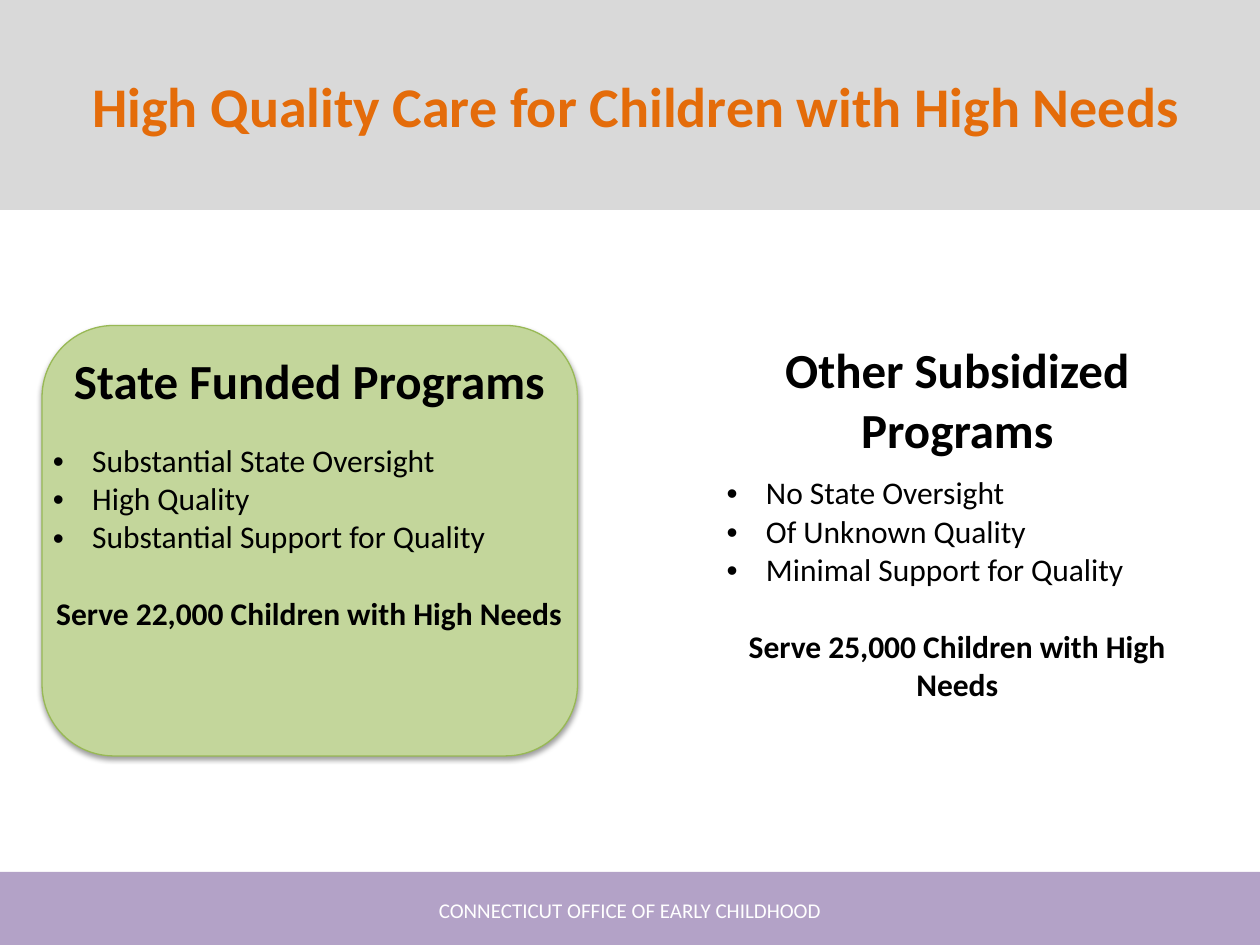
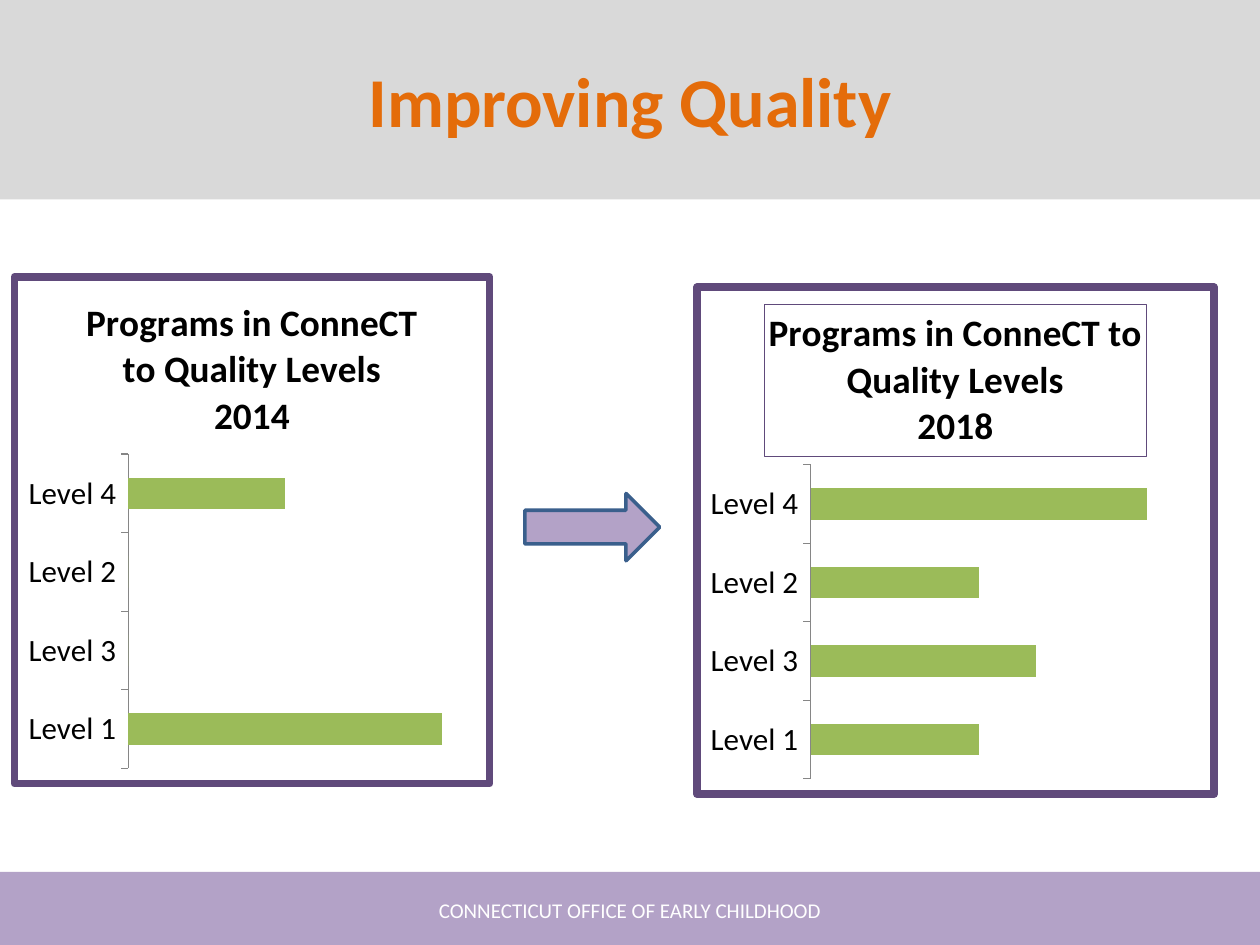
"""Build two slides on the quality of state funded and subsidized child care."""
from lxml import etree
from pptx import Presentation
from pptx.chart.data import CategoryChartData
from pptx.dml.color import RGBColor
from pptx.enum.chart import XL_CHART_TYPE, XL_TICK_MARK
from pptx.enum.shapes import MSO_SHAPE
from pptx.enum.text import MSO_ANCHOR, MSO_AUTO_SIZE, PP_ALIGN
from pptx.oxml import parse_xml
from pptx.oxml.ns import nsdecls, qn
from pptx.util import Pt

BAR = XL_CHART_TYPE.BAR_CLUSTERED
TICK_OUTSIDE, TICK_NONE = XL_TICK_MARK.OUTSIDE, XL_TICK_MARK.NONE
RECTANGLE, ROUNDED = MSO_SHAPE.RECTANGLE, MSO_SHAPE.ROUNDED_RECTANGLE
RIGHT_ARROW = MSO_SHAPE.RIGHT_ARROW
MIDDLE, CENTER, LEFT = MSO_ANCHOR.MIDDLE, PP_ALIGN.CENTER, PP_ALIGN.LEFT
NO_AUTOFIT = MSO_AUTO_SIZE.NONE

FONT = "Calibri"
COLORS = {
    "title": "E46C0A", "title_band": "D9D9D9", "lilac": "B3A2C7",
    "white": "FFFFFF", "black": "000000", "panel": "C3D69B",
    "panel_line": "98B955", "bar": "9BBB59", "axis": "868686",
    "border": "604A7B", "arrow_line": "3A5F8C",
}
SLIDE_WIDTH, SLIDE_HEIGHT = 720, 540
TITLE_ONLY_LAYOUT = 5
PLAIN_TABLE_STYLE = "{2D5ABB26-0587-4C30-8999-92F81FD0307C}"
FOOTER = "CONNECTICUT OFFICE OF EARLY CHILDHOOD"
LEVELS = ["Level 1", "Level 3", "Level 2", "Level 4"]
CHART_HEADING = "Programs in ConneCT to Quality Levels"


def color(name):
    return RGBColor.from_string(COLORS[name])


def points(*lengths):
    return [Pt(length) for length in lengths]


def set_font(font, size, color_name, bold=False):
    font.name, font.size, font.bold = FONT, Pt(size), bold
    font.color.rgb = color(color_name)


def set_line(line, color_name, width):
    line.color.rgb = color(color_name)
    line.width = Pt(width)


def add_filled_shape(slide, kind, box, fill, line=None):
    shape = slide.shapes.add_shape(kind, *points(*box))
    shape.shadow.inherit = False
    shape.fill.solid()
    shape.fill.fore_color.rgb = color(fill)
    if line:
        set_line(shape.line, *line)
    else:
        shape.line.fill.background()
    return shape


def add_titled_slide(presentation, text, size, band_height):
    slide = presentation.slides.add_slide(presentation.slide_layouts[TITLE_ONLY_LAYOUT])
    title = slide.shapes.title
    title.left, title.top, title.width, title.height = points(0, 0, SLIDE_WIDTH, band_height)
    title.fill.solid()
    title.fill.fore_color.rgb = color("title_band")
    title.text_frame.text = text
    title.text_frame.auto_size = NO_AUTOFIT
    title.text_frame.vertical_anchor = MIDDLE
    paragraph = title.text_frame.paragraphs[0]
    paragraph.alignment = CENTER
    set_font(paragraph.font, size, "title", True)

    footer = add_filled_shape(slide, RECTANGLE, (0, 498.25, SLIDE_WIDTH, 43.2), "lilac")
    footer.text_frame.text = FOOTER
    footer.text_frame.vertical_anchor = MIDDLE
    paragraph = footer.text_frame.paragraphs[0]
    paragraph.alignment = CENTER
    set_font(paragraph.font, 12, "white")
    return slide


def add_panel(slide, box):
    panel = add_filled_shape(slide, ROUNDED, box, "panel", ("panel_line", 0.75))
    effects = panel._element.spPr.find(qn("a:effectLst"))
    effects.append(parse_xml(
        f'<a:outerShdw {nsdecls("a")} blurRad="{Pt(3.1)}" dist="{Pt(1.6)}" '
        f'dir="5400000" rotWithShape="0"><a:srgbClr val="{COLORS["black"]}">'
        '<a:alpha val="38000"/></a:srgbClr></a:outerShdw>'))


def set_bullet(paragraph):
    properties = paragraph._p.get_or_add_pPr()
    properties.set("marL", str(Pt(22.5)))
    properties.set("indent", str(-Pt(22.5)))
    etree.SubElement(properties, qn("a:buFont")).set("typeface", "Arial")
    etree.SubElement(properties, qn("a:buChar")).set("char", "•")


def add_program_table(slide, box, heading, features, served):
    table = slide.shapes.add_table(2, 1, *points(*box)).table
    table.first_row = table.horz_banding = False
    table._tbl.tblPr.find(qn("a:tableStyleId")).text = PLAIN_TABLE_STYLE
    for row, height in zip(table.rows, (51, 162)):
        row.height = Pt(height)
        row.cells[0].fill.background()

    heading_cell, details_cell = table.cell(0, 0), table.cell(1, 0)
    heading_cell.text = heading
    paragraph = heading_cell.text_frame.paragraphs[0]
    paragraph.alignment = CENTER
    set_font(paragraph.font, 28, "black", True)

    details_cell.text = "\n".join(features + [served])
    *bullets, closing = details_cell.text_frame.paragraphs
    for paragraph in bullets:
        paragraph.alignment = LEFT
        set_font(paragraph.font, 18, "black")
        set_bullet(paragraph)
    closing.alignment = CENTER
    closing.space_before = Pt(22)
    set_font(closing.font, 18, "black", True)


def set_plot_layout(chart, x, y, width, height):
    plot_area = chart._chartSpace.chart.plotArea
    for layout in plot_area.findall(qn("c:layout")):
        plot_area.remove(layout)
    plot_area.insert(0, parse_xml(
        f'<c:layout {nsdecls("c")}><c:manualLayout><c:layoutTarget val="inner"/>'
        '<c:xMode val="edge"/><c:yMode val="edge"/>'
        f'<c:x val="{x}"/><c:y val="{y}"/><c:w val="{width}"/><c:h val="{height}"/>'
        '</c:manualLayout></c:layout>'))


def set_chart_border(chart, color_name, width):
    chart._chartSpace.chart.addnext(parse_xml(
        f'<c:spPr {nsdecls("c", "a")}><a:noFill/><a:ln w="{Pt(width)}"><a:solidFill>'
        f'<a:srgbClr val="{COLORS[color_name]}"/></a:solidFill></a:ln></c:spPr>'))


def add_level_chart(slide, box, year, values, plot_layout, framed_title=False):
    data = CategoryChartData()
    data.categories = LEVELS
    data.add_series("Series 1", values)
    chart = slide.shapes.add_chart(BAR, *points(*box), data).chart
    set_font(chart.font, 18, "black")
    chart.has_legend = False
    set_chart_border(chart, "border", 4.5)
    set_plot_layout(chart, *plot_layout)

    title = chart.chart_title
    title.text_frame.text = f"{CHART_HEADING}\n{year}"
    for paragraph in title.text_frame.paragraphs:
        set_font(paragraph.font, 21.6, "black", True)
    if framed_title:
        set_line(title.format.line, "border", 0.75)

    plot = chart.plots[0]
    plot.gap_width = 150
    plot.vary_by_categories = False
    bars = plot.series[0].format.fill
    bars.solid()
    bars.fore_color.rgb = color("bar")

    levels, scale = chart.category_axis, chart.value_axis
    levels.major_tick_mark, levels.minor_tick_mark = TICK_OUTSIDE, TICK_NONE
    set_line(levels.format.line, "axis", 0.75)
    scale.minimum_scale, scale.maximum_scale = 0, 100
    scale.has_major_gridlines = False
    scale.visible = False


def add_care_slide(presentation):
    slide = add_titled_slide(
        presentation, " High Quality Care for Children with High Needs", 32, 120)
    add_panel(slide, (24, 186, 306, 246))
    add_program_table(
        slide, (23, 198, 307.5, 213), "State Funded Programs",
        ["Substantial State Oversight", "High Quality", "Substantial Support for Quality"],
        "Serve 22,000 Children with High Needs")
    add_program_table(
        slide, (408, 192, 278, 213), "Other Subsidized Programs",
        ["No State Oversight", "Of Unknown Quality", "Minimal Support for Quality"],
        "Serve 25,000 Children with High Needs")


def add_quality_slide(presentation):
    slide = add_titled_slide(presentation, "Improving Quality", 40, 114)
    add_level_chart(slide, (6, 156, 276, 294), 2014, (100, 0, 0, 50),
                    (0.24, 0.35, 0.66, 0.62))
    add_level_chart(slide, (396, 162, 300, 294), 2018, (50, 67, 50, 100),
                    (0.22, 0.35, 0.65, 0.62), framed_title=True)
    add_filled_shape(slide, RIGHT_ARROW, (300, 282, 77, 38.5), "lilac", ("arrow_line", 2))


def main():
    presentation = Presentation()
    presentation.slide_width, presentation.slide_height = points(SLIDE_WIDTH, SLIDE_HEIGHT)
    add_care_slide(presentation)
    add_quality_slide(presentation)
    presentation.save("out.pptx")


if __name__ == "__main__":
    main()
